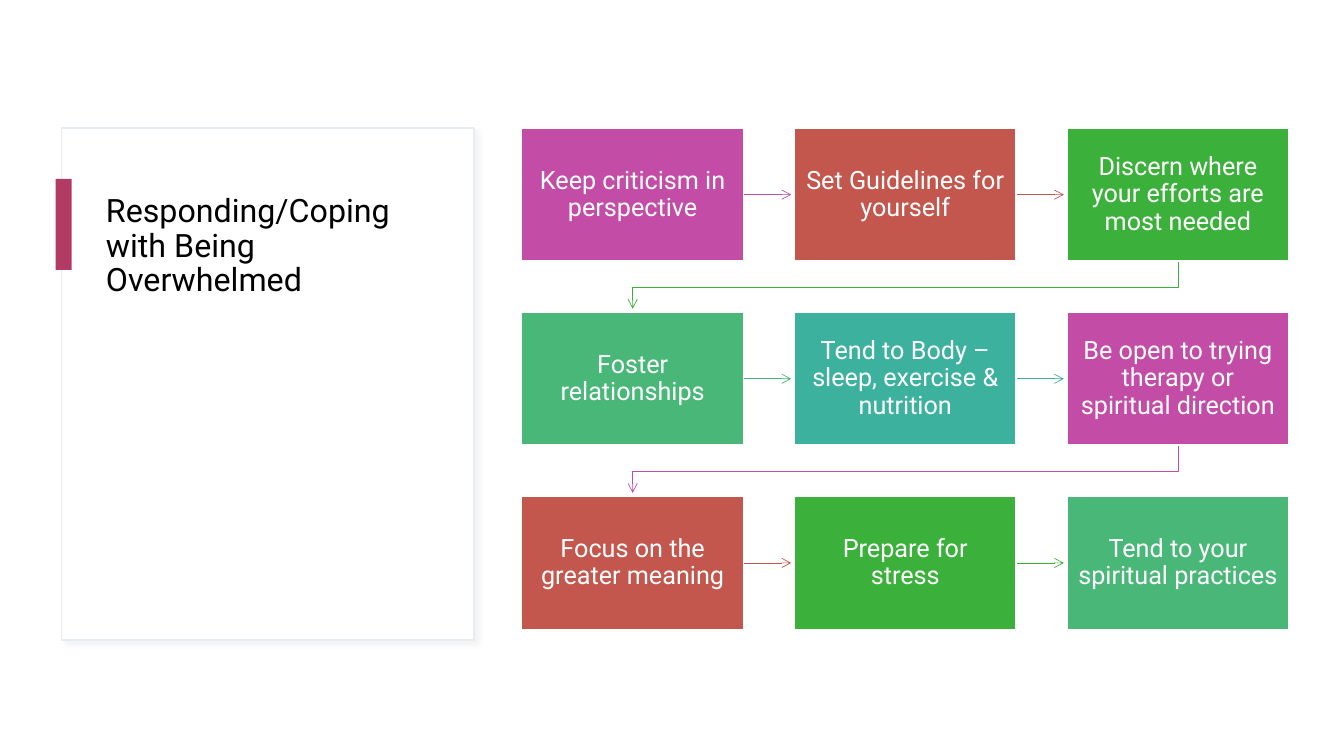
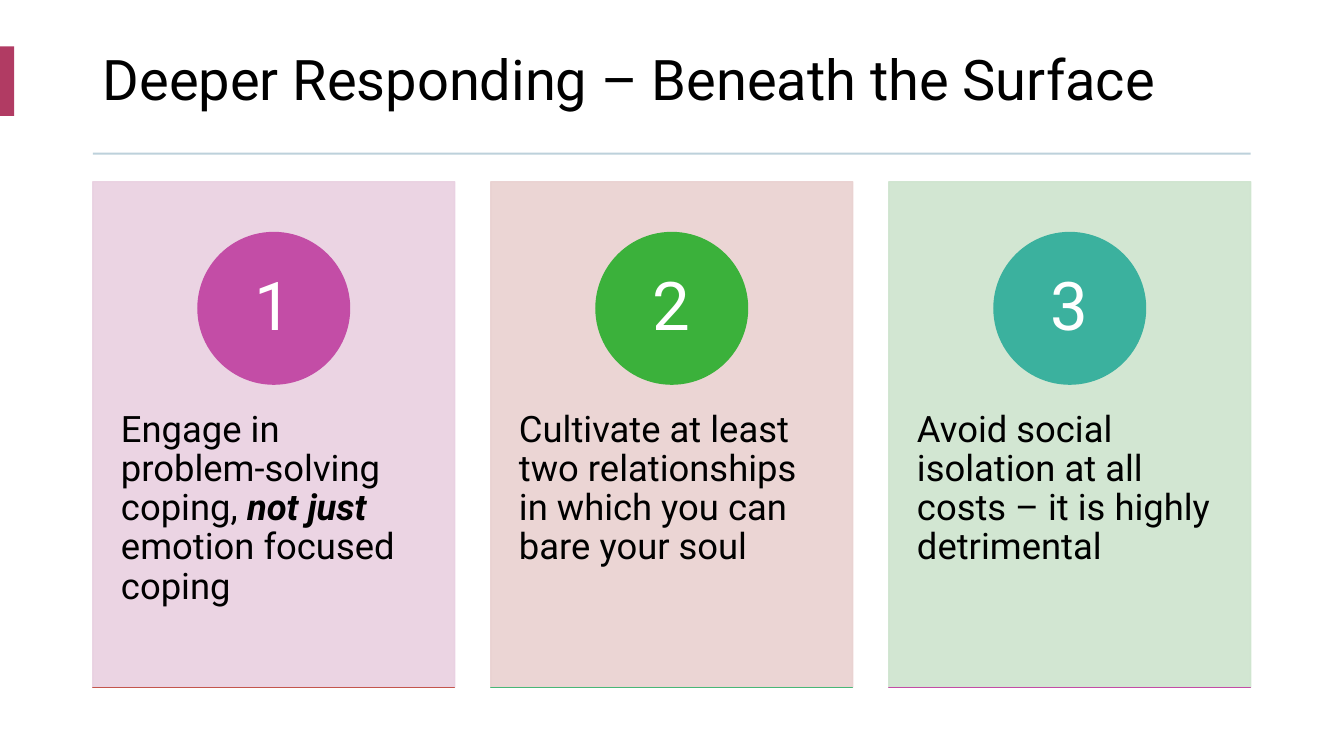
from lxml.etree import SubElement
from pptx import Presentation
from pptx.dml.color import RGBColor
from pptx.enum.shapes import MSO_CONNECTOR, MSO_SHAPE
from pptx.enum.text import MSO_ANCHOR, MSO_AUTO_SIZE, PP_ALIGN
from pptx.oxml.ns import qn
from pptx.util import Cm, Pt

FONT = "Roboto"
COLORS = {
    "white": "FFFFFF",
    "black": "000000",
    "accent": "B13B63",
    "edge": "E5EDF0",
    "rule": "BDD1DB",
    "shade": "D9D9D9",
    "pink": "C34DA6",
    "red": "C3564D",
    "green": "3BB13B",
    "mint": "48B777",
    "teal": "3BB19E",
    "pale pink": "E9D0E1",
    "pale red": "E9D1D0",
    "pale green": "CEE4CE",
}
STEPS = [
    ("Keep criticism in perspective", "pink"),
    ("Set Guidelines for yourself", "red"),
    ("Discern where your efforts are most needed", "green"),
    ("Foster relationships", "mint"),
    ("Tend to Body – sleep, exercise & nutrition", "teal"),
    ("Be open to trying therapy or spiritual direction", "pink"),
    ("Focus on the greater meaning", "red"),
    ("Prepare for stress", "green"),
    ("Tend to your spiritual practices", "mint"),
]
CARDS = [
    (["Engage in problem-solving coping, ", ("not just", True), " emotion focused coping"],
     "pale pink", "pink", "red"),
    (["Cultivate at least two relationships in which you can bare your soul"],
     "pale red", "green", "mint"),
    (["Avoid social isolation at all costs – it is highly detrimental"],
     "pale green", "teal", "pink"),
]


def paint(name):
    return RGBColor.from_string(COLORS[name])


def write(shape, *parts, size, color="black", align=PP_ALIGN.LEFT,
          anchor=MSO_ANCHOR.TOP, pad=(0.25, 0.13)):
    frame = shape.text_frame
    frame.word_wrap = True
    frame.auto_size = MSO_AUTO_SIZE.NONE
    frame.vertical_anchor = anchor
    frame.margin_left = frame.margin_right = Cm(pad[0])
    frame.margin_top = frame.margin_bottom = Cm(pad[1])
    para = frame.paragraphs[0]
    para.alignment = align
    para.line_spacing = 0.9
    for part in parts:
        words, strong = part if isinstance(part, tuple) else (part, False)
        run = para.add_run()
        run.text = words
        run.font.name = FONT
        run.font.size = Pt(size)
        run.font.bold = run.font.italic = strong
        run.font.color.rgb = paint(color)


def block(slide, box, fill, edge=None, kind=MSO_SHAPE.RECTANGLE):
    shape = slide.shapes.add_shape(kind, *map(Cm, box))
    shape.shadow.inherit = False
    shape.fill.solid()
    shape.fill.fore_color.rgb = paint(fill)
    if edge:
        shape.line.color.rgb = paint(edge)
        shape.line.width = Pt(1)
    else:
        shape.line.fill.background()
    return shape


def fade(shape, share):
    for tint in shape.element.spPr.iter(qn("a:srgbClr")):
        SubElement(tint, qn("a:alpha"), val=str(share * 1000))


def shade(shape):
    glow = SubElement(shape.element.spPr.find(qn("a:effectLst")), qn("a:outerShdw"),
                      blurRad=str(Pt(4)), dist=str(Pt(3)), dir="2700000",
                      algn="tl", rotWithShape="0")
    tint = SubElement(glow, qn("a:srgbClr"), val=COLORS["shade"])
    SubElement(tint, qn("a:alpha"), val="30000")


def point(line, color):
    line.line.color.rgb = paint(color)
    line.line.width = Pt(0.5)
    SubElement(line.element.spPr.find(qn("a:ln")), qn("a:tailEnd"), type="arrow")


def arrow(slide, left, top, width, color):
    line = slide.shapes.add_connector(
        MSO_CONNECTOR.STRAIGHT, Cm(left), Cm(top), Cm(left + width), Cm(top))
    point(line, color)
    SubElement(line.element.spPr, qn("a:effectLst"))


def bend(slide, start, end, mid, color):
    spots = [(start[0], mid), (end[0], mid), end]
    path = slide.shapes.build_freeform(Cm(start[0]), Cm(start[1]))
    path.add_line_segments([(Cm(x), Cm(y)) for x, y in spots], close=False)
    line = path.convert_to_shape()
    line.fill.background()
    point(line, color)
    line.shadow.inherit = False


def start_slide(deck, title, box, size, anchor, bar):
    slide = deck.slides.add_slide(deck.slide_layouts[5])
    head = slide.shapes.title
    head.left, head.top, head.width, head.height = map(Cm, box)
    write(head, title, size=size, anchor=anchor)
    block(slide, bar, "accent")
    return slide


def add_steps(deck):
    slide = start_slide(deck, "Responding/Coping with Being Overwhelmed",
                        (2.42, 4.77, 8.61, 9.78), 23, MSO_ANCHOR.TOP,
                        (1.4, 4.51, 0.41, 2.29))
    panel = block(slide, (1.55, 3.23, 10.4, 12.9), "white", "edge")
    shade(panel)
    slide.shapes.title.element.addprevious(panel.element)
    left, top, wide, high = 13.15, 3.23, 5.59, 3.35
    across, down, reach = 6.87, 4.64, 1.2
    for index, (words, color) in enumerate(STEPS):
        row, col = divmod(index, 3)
        x, y = left + col * across, top + row * down
        if col < 2:
            arrow(slide, x + wide, y + high / 2, reach, color)
        elif row < 2:
            base = y + high
            bend(slide, (x + wide / 2, base), (left + wide / 2, base + reach),
                 base + 0.65, color)
        step = block(slide, (x, y, wide, high), color, "white")
        write(step, words, size=18, color="white", align=PP_ALIGN.CENTER,
              anchor=MSO_ANCHOR.MIDDLE, pad=(0.28, 0.28))


def add_cards(deck):
    left, top, wide, high, across = 2.34, 4.58, 9.12, 12.74, 10.03
    full = 2 * across + wide
    slide = start_slide(deck, "Deeper Responding – Beneath the Surface",
                        (left, 0.69, full, 2.79), 40, MSO_ANCHOR.MIDDLE,
                        (0, 1.17, 0.36, 1.75))
    block(slide, (left, 3.85, full, 0.05), "rule")
    disc = 3.82
    for index, (parts, pale, bold, base) in enumerate(CARDS):
        x = left + index * across
        card = block(slide, (x, top, wide, high), pale, pale)
        fade(card, 90)
        write(card, *parts, size=26, pad=(0.71, 0.91))
        card.text_frame.margin_top = Cm(5.77)
        badge = block(slide, (x + (wide - disc) / 2, top + 1.28, disc, disc),
                      bold, bold, MSO_SHAPE.OVAL)
        write(badge, str(index + 1), size=48, color="white", align=PP_ALIGN.CENTER,
              anchor=MSO_ANCHOR.MIDDLE, pad=(0.3, 0.03))
        block(slide, (x, top + high, wide, 0), base, base)


def main():
    deck = Presentation()
    deck.slide_width, deck.slide_height = Cm(33.87), Cm(19.05)
    add_steps(deck)
    add_cards(deck)
    deck.save("out.pptx")


if __name__ == "__main__":
    main()
